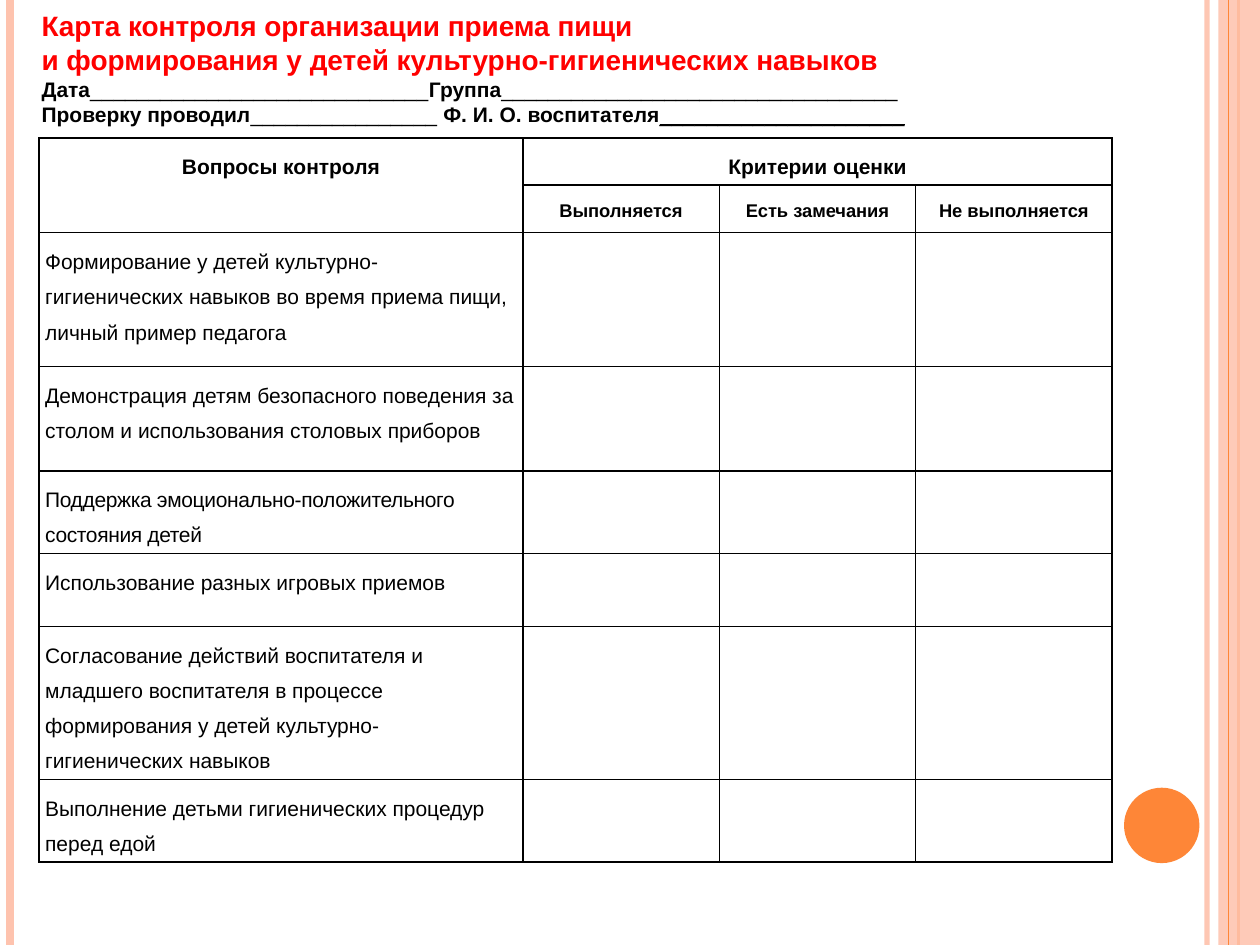
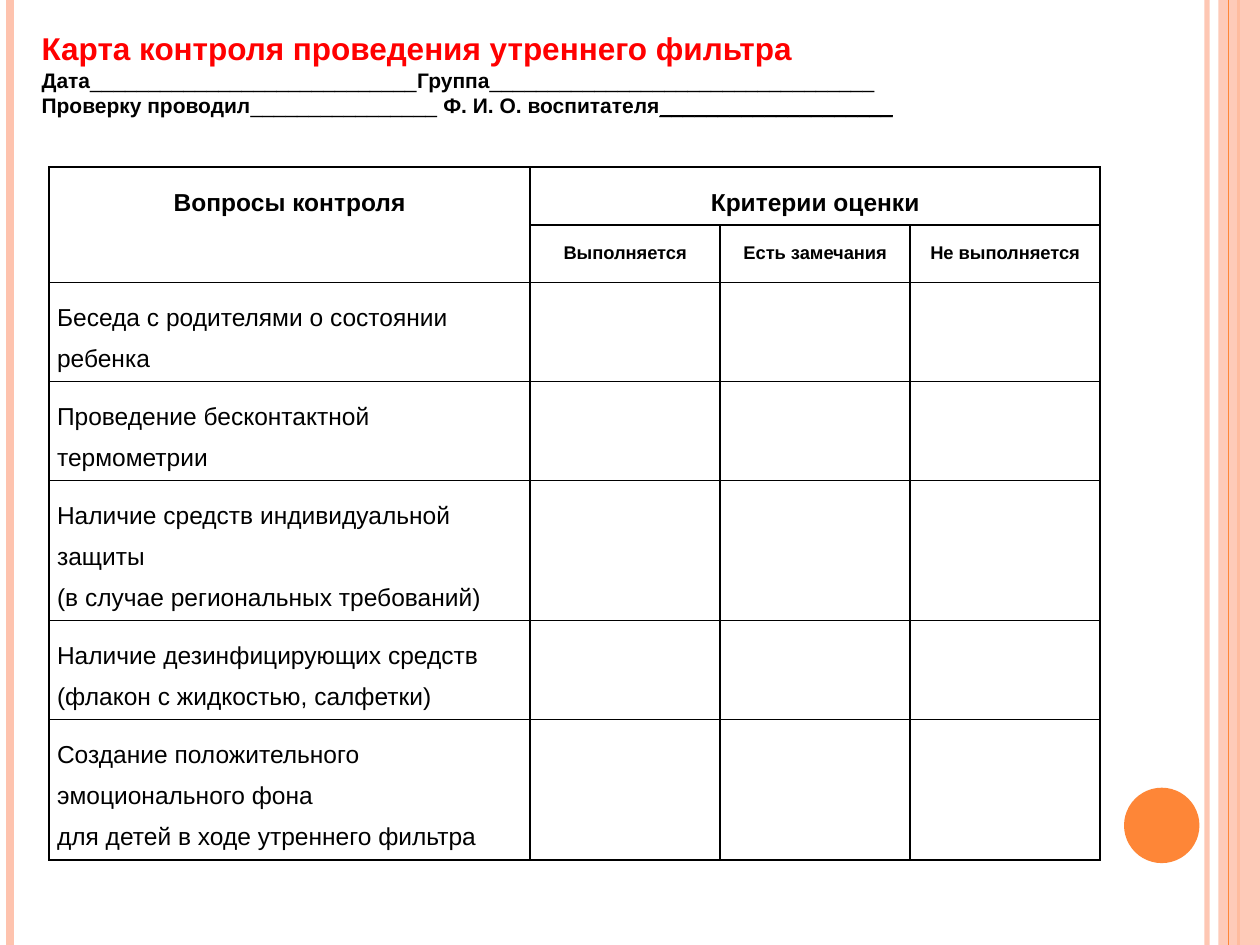
from lxml import etree
from pptx import Presentation
from pptx.dml.color import RGBColor
from pptx.enum.shapes import MSO_CONNECTOR, MSO_SHAPE
from pptx.enum.text import MSO_ANCHOR, PP_ALIGN
from pptx.oxml.ns import qn
from pptx.util import Cm, Pt

STRAIGHT = MSO_CONNECTOR.STRAIGHT
RECTANGLE = MSO_SHAPE.RECTANGLE
OVAL = MSO_SHAPE.OVAL
TOP = MSO_ANCHOR.TOP
LEFT, CENTER = PP_ALIGN.LEFT, PP_ALIGN.CENTER

COLORS = {"title": "FF0000", "text": "000000", "peach": "FEC3AE", "orange": "FE8637"}
FONT = "Arial"
SLIDE_W, SLIDE_H = 25.4, 19.05
RATINGS = ["Выполняется", "Есть замечания", "Не выполняется"]

MEALS = {
    "title": ["Карта контроля организации приема пищи",
              "и формирования у детей культурно-гигиенических навыков"],
    "title_size": 16,
    "header_top": 0,
    "blanks": (29, 34, 21),
    "table_at": (0.79, 2.78),
    "columns": [9.75, 3.96, 3.96, 3.96],
    "rows": [0.95, 0.96, 2.7, 2.1, 1.66, 1.47, 3.08, 1.66],
    "margin": 0.12,
    "size": 12,
    "questions": [
        "Формирование у детей культурно-гигиенических навыков во время приема пищи, "
        "личный пример педагога",
        "Демонстрация детям безопасного поведения за столом и использования столовых приборов",
        "Поддержка эмоционально-положительного состояния детей",
        "Использование разных игровых приемов",
        "Согласование действий воспитателя и младшего воспитателя в процессе "
        "формирования у детей культурно-гигиенических навыков",
        "Выполнение детьми гигиенических процедур перед едой",
    ],
    "tight_question": 2,
}
MORNING_FILTER = {
    "title": ["Карта контроля проведения утреннего фильтра"],
    "title_size": 18,
    "header_top": 0.41,
    "blanks": (28, 33, 20),
    "table_at": (0.99, 3.37),
    "columns": [9.7, 3.83, 3.83, 3.83],
    "rows": [1.17, 1.13, 2.0, 1.99, 2.83, 1.99, 2.83],
    "margin": 0.16,
    "size": 14,
    "questions": [
        "Беседа с родителями о состоянии ребенка",
        "Проведение бесконтактной термометрии",
        "Наличие средств индивидуальной защиты\n(в случае региональных требований)",
        "Наличие дезинфицирующих средств\n(флакон с жидкостью, салфетки)",
        "Создание положительного эмоционального фона\nдля детей в ходе утреннего фильтра",
    ],
    "tight_question": None,
}


def rgb(name):
    return RGBColor.from_string(COLORS[name])


def set_opacity(element, percent):
    color = next(element.iter(qn("a:srgbClr")))
    etree.SubElement(color, qn("a:alpha")).set("val", str(percent * 1000))


def style_font(font, size, bold=False, color="text", underline=None):
    font.name, font.size, font.bold = FONT, Pt(size), bold
    font.underline = underline
    font.color.rgb = rgb(color)


# Side decoration
def add_stripe(slide, x, width, color, opacity=100):
    stripe = slide.shapes.add_connector(STRAIGHT, Cm(x), 0, Cm(x), Cm(SLIDE_H))
    stripe.line.color.rgb = rgb(color)
    stripe.line.width = Pt(width)
    properties = stripe._element.spPr
    etree.SubElement(properties, qn("a:effectLst"))
    if opacity < 100:
        set_opacity(properties, opacity)


def add_solid(slide, preset, left, top, width, height, color):
    solid = slide.shapes.add_shape(preset, Cm(left), Cm(top), Cm(width), Cm(height))
    solid.shadow.inherit = False
    solid.fill.solid()
    solid.fill.fore_color.rgb = rgb(color)
    solid.line.fill.background()
    return solid


def add_decoration(slide):
    add_stripe(slide, 24.33, 3, "peach", opacity=93)
    add_stripe(slide, 0.2, 4.5, "peach")
    add_stripe(slide, 24.97, 1.5, "orange")
    band = add_solid(slide, RECTANGLE, 24.56, 0, SLIDE_W - 24.56, SLIDE_H, "peach")
    set_opacity(band._element.spPr, 87)
    add_stripe(slide, 24.77, 0.75, "orange")
    add_solid(slide, OVAL, 22.66, 15.88, 1.52, 1.52, "orange")


# Title and the lines to fill in
def add_header(slide, card):
    box = slide.shapes.add_textbox(Cm(0.59), Cm(card["header_top"]), Cm(18.47), Cm(2.64))
    frame = box.text_frame
    frame.word_wrap = True
    frame.vertical_anchor = TOP
    frame.margin_top = Cm(0.18)

    date, group, teacher = ("_" * count for count in card["blanks"])
    form_lines = [
        [("Дата", date, False), ("Группа", group, False)],
        [("Проверку проводил", "_" * 16 + " ", False),
         ("Ф. И. О. воспитателя", teacher, True)],
    ]
    frame.text = "\n".join(card["title"])
    for paragraph in frame.paragraphs:
        style_font(paragraph.runs[0].font, card["title_size"], True, "title")
    for fields in form_lines:
        paragraph = frame.add_paragraph()
        for label, blank, underline in fields:
            for text, bold, underlined in ((label, True, None), (blank, False, underline)):
                run = paragraph.add_run()
                run.text = text
                style_font(run.font, 12, bold, underline=underlined)


# Control table
def add_borders(cell):
    properties = cell._tc.get_or_add_tcPr()
    for index, side in enumerate(("a:lnL", "a:lnR", "a:lnT", "a:lnB")):
        border = etree.Element(qn(side), w=str(Pt(1)))
        fill = etree.SubElement(border, qn("a:solidFill"))
        etree.SubElement(fill, qn("a:srgbClr")).set("val", COLORS["text"])
        properties.insert(index, border)


def write_cell(cell, text, size, bold=False, align=LEFT):
    cell.text_frame.text = text
    for paragraph in cell.text_frame.paragraphs:
        paragraph.alignment = align
        paragraph.line_spacing = 1.5
        for run in paragraph.runs:
            style_font(run.font, size, bold)


def add_control_table(slide, card):
    columns, rows, size = card["columns"], card["rows"], card["size"]
    left, top = card["table_at"]
    table = slide.shapes.add_table(len(rows), len(columns), Cm(left), Cm(top),
                                   Cm(sum(columns)), Cm(sum(rows))).table
    table.first_row = table.horz_banding = False
    for column, width in zip(table.columns, columns):
        column.width = Cm(width)
    for row, height in zip(table.rows, rows):
        row.height = Cm(height)
    for cell in table.iter_cells():
        cell.fill.background()
        cell.margin_left = cell.margin_right = Cm(card["margin"])
        cell.margin_top = cell.margin_bottom = Cm(card["margin"])
        cell.text_frame.paragraphs[0].font.size = Pt(size)
        add_borders(cell)

    # Two-level heading
    table.cell(0, 0).merge(table.cell(1, 0))
    table.cell(0, 1).merge(table.cell(0, 3))
    write_cell(table.cell(0, 0), "Вопросы контроля", size, True, CENTER)
    write_cell(table.cell(0, 1), "Критерии оценки", size, True, CENTER)
    for column, rating in enumerate(RATINGS, start=1):
        write_cell(table.cell(1, column), rating, 10.5, True, CENTER)

    # Questions
    for index, question in enumerate(card["questions"]):
        cell = table.cell(index + 2, 0)
        write_cell(cell, question, size)
        if index == card["tight_question"]:
            run = cell.text_frame.paragraphs[0].runs[0]
            run.font._element.set("spc", "-20")


def main():
    presentation = Presentation()
    presentation.slide_width, presentation.slide_height = Cm(SLIDE_W), Cm(SLIDE_H)
    for card in (MEALS, MORNING_FILTER):
        slide = presentation.slides.add_slide(presentation.slide_layouts[6])
        add_decoration(slide)
        add_control_table(slide, card)
        add_header(slide, card)
    presentation.save("out.pptx")


if __name__ == "__main__":
    main()
